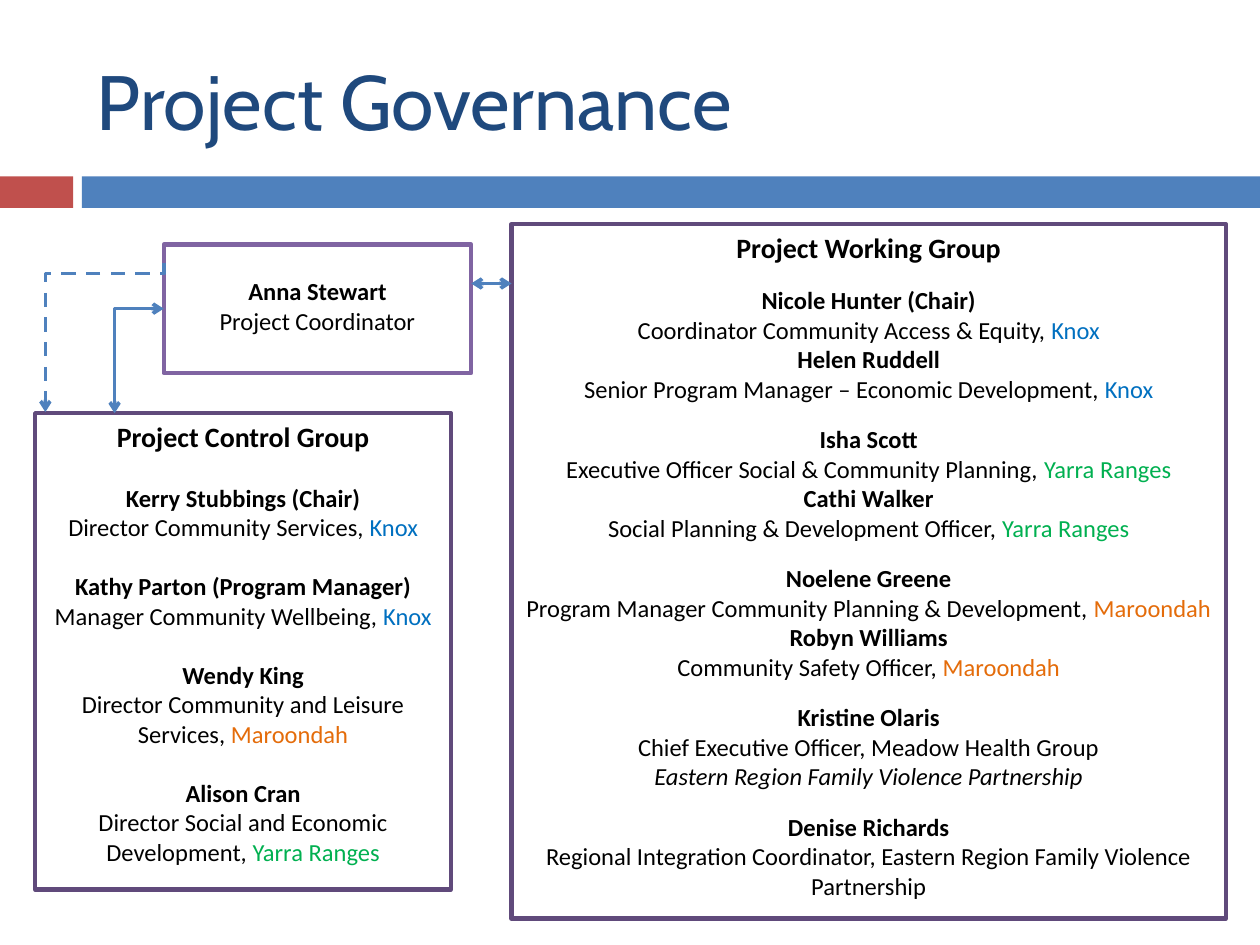
from lxml.etree import SubElement
from pptx import Presentation
from pptx.dml.color import RGBColor
from pptx.enum.dml import MSO_LINE
from pptx.enum.shapes import MSO_CONNECTOR, MSO_SHAPE
from pptx.enum.text import MSO_ANCHOR, PP_ALIGN
from pptx.oxml.ns import qn
from pptx.util import Inches, Pt

BLUE, RED, NAVY = "4F81BD", "C0504D", "1F497D"
PURPLE, DARK_PURPLE = "8064A2", "604A7B"
COUNCILS = {"Knox": "0070C0", "Yarra Ranges": "00B050", "Maroondah": "E46C0A"}


def rgb(code):
    return RGBColor.from_string(code)


class Deck:
    font = "Calibri"

    def __init__(self, slide):
        self.s = slide

    def title(self, text, *box):
        sp = self.s.shapes.add_textbox(*map(Inches, box))
        tf = sp.text_frame
        tf.word_wrap = True
        tf.vertical_anchor = MSO_ANCHOR.MIDDLE
        p = tf.paragraphs[0]
        p.text = text
        p.font.name, p.font.size = "Cabin", Pt(44)
        p.font.color.rgb = rgb(NAVY)

    def rect(self, box, fill, line=None):
        sp = self.s.shapes.add_shape(MSO_SHAPE.RECTANGLE, *map(Inches, box))
        sp.shadow.inherit = False
        sp.fill.solid()
        sp.fill.fore_color.rgb = rgb(fill)
        if line:
            sp.line.color.rgb = rgb(line)
            sp.line.width = Pt(2.5)
        else:
            sp.line.fill.background()
        return sp

    def paragraph(self, tf, text, size=14, bold=False, italic=False, gap=0):
        p = tf.paragraphs[0] if not tf.text else tf.add_paragraph()
        p.alignment = PP_ALIGN.CENTER
        p.space_before = Pt(gap)
        p.font.name, p.font.size = self.font, Pt(size)
        p.font.bold, p.font.italic = bold, italic
        p.font.color.rgb = rgb("000000")
        role, comma, council = text.rpartition(", ")
        if council in COUNCILS:
            p.add_run().text = role + comma
            r = p.add_run()
            r.text = council
            r.font.color.rgb = rgb(COUNCILS[council])
        else:
            p.add_run().text = text

    def panel(self, box, line, heading, groups, gap=0):
        """Each group is a list of (name, role, optional italic note)."""
        tf = self.rect(box, "FFFFFF", line).text_frame
        tf.word_wrap = True
        tf.vertical_anchor = MSO_ANCHOR.TOP if heading else MSO_ANCHOR.MIDDLE
        if heading:
            self.paragraph(tf, heading, size=16, bold=True)
        else:
            tf.margin_bottom = Inches(0.1)
        for group in groups:
            for i, (name, role, *notes) in enumerate(group):
                self.paragraph(tf, name, bold=True, gap=0 if i else gap)
                self.paragraph(tf, role)
                for note in notes:
                    self.paragraph(tf, note, italic=True)

    def arrow(self, kind, start, end, ends=("headEnd", "tailEnd")):
        c = self.s.shapes.add_connector(kind, *map(Inches, start + end))
        c.line.color.rgb = rgb(BLUE)
        c.line.width = Pt(2)
        ln = c.line._get_or_add_ln()
        for tag in ends:
            SubElement(ln, qn("a:" + tag), type="arrow")
        SubElement(c._element.spPr, qn("a:effectLst"))
        return c

    def elbow(self, start, end, preset, adjust=None, turn=0, **style):
        c = self.arrow(MSO_CONNECTOR.ELBOW, start, end, **style)
        sp_pr = c._element.spPr
        geom = sp_pr.find(qn("a:prstGeom"))
        geom.set("prst", preset)
        if adjust is not None:
            SubElement(geom.find(qn("a:avLst")), qn("a:gd"),
                       name="adj1", fmla=f"val {round(adjust * 100000)}")
        if turn:
            sp_pr.find(qn("a:xfrm")).set("rot", str(turn * 60000))
        return c


CONTROL_GROUP = [
    [("Kerry Stubbings (Chair)", "Director Community Services, Knox")],
    [("Kathy Parton (Program Manager)", "Manager Community Wellbeing, Knox")],
    [("Wendy King", "Director Community and Leisure Services, Maroondah")],
    [("Alison Cran", "Director Social and Economic Development, Yarra Ranges")],
]
WORKING_GROUP = [
    [("Nicole Hunter (Chair)", "Coordinator Community Access & Equity, Knox"),
     ("Helen Ruddell", "Senior Program Manager – Economic Development, Knox")],
    [("Isha Scott", "Executive Officer Social & Community Planning, Yarra Ranges"),
     ("Cathi Walker", "Social Planning & Development Officer, Yarra Ranges")],
    [("Noelene Greene", "Program Manager Community Planning & Development, Maroondah"),
     ("Robyn Williams", "Community Safety Officer, Maroondah")],
    [("Kristine Olaris", "Chief Executive Officer, Meadow Health Group",
      "Eastern Region Family Violence Partnership")],
    [("Denise Richards",
      "Regional Integration Coordinator, Eastern Region Family Violence Partnership")],
]


def main():
    prs = Presentation()
    prs.slide_width, prs.slide_height = Inches(10), Inches(7.5)
    deck = Deck(prs.slides.add_slide(prs.slide_layouts[6]))

    # Header band and title
    deck.rect((0, 1.4, 0.58, 0.25), RED)
    deck.rect((0.65, 1.4, 9.35, 0.25), BLUE)
    deck.title("Project Governance", 0.67, 0.25, 8.92, 1.08)

    # Governance groups
    deck.panel((0.28, 3.28, 3.3, 3.78), DARK_PURPLE,
               "Project Control Group", CONTROL_GROUP, gap=17)
    deck.panel((1.3, 1.94, 2.44, 1.02), PURPLE, None,
               [[("Anna Stewart", "Project Coordinator")]])
    deck.panel((4.06, 1.78, 5.67, 5.51), DARK_PURPLE,
               "Project Working Group", WORKING_GROUP, gap=12.2)

    # Reporting lines
    dashed = deck.elbow((0.24, 2.21), (1.42, 3.15), "bentConnector3",
                        adjust=0.07, turn=90, ends=("tailEnd",))
    dashed.line.dash_style = MSO_LINE.DASH
    deck.elbow((1.3, 2.45), (0.91, 3.28), "bentConnector2")
    deck.arrow(MSO_CONNECTOR.STRAIGHT, (3.74, 2.25), (4.06, 2.25))

    prs.save("out.pptx")


if __name__ == "__main__":
    main()
